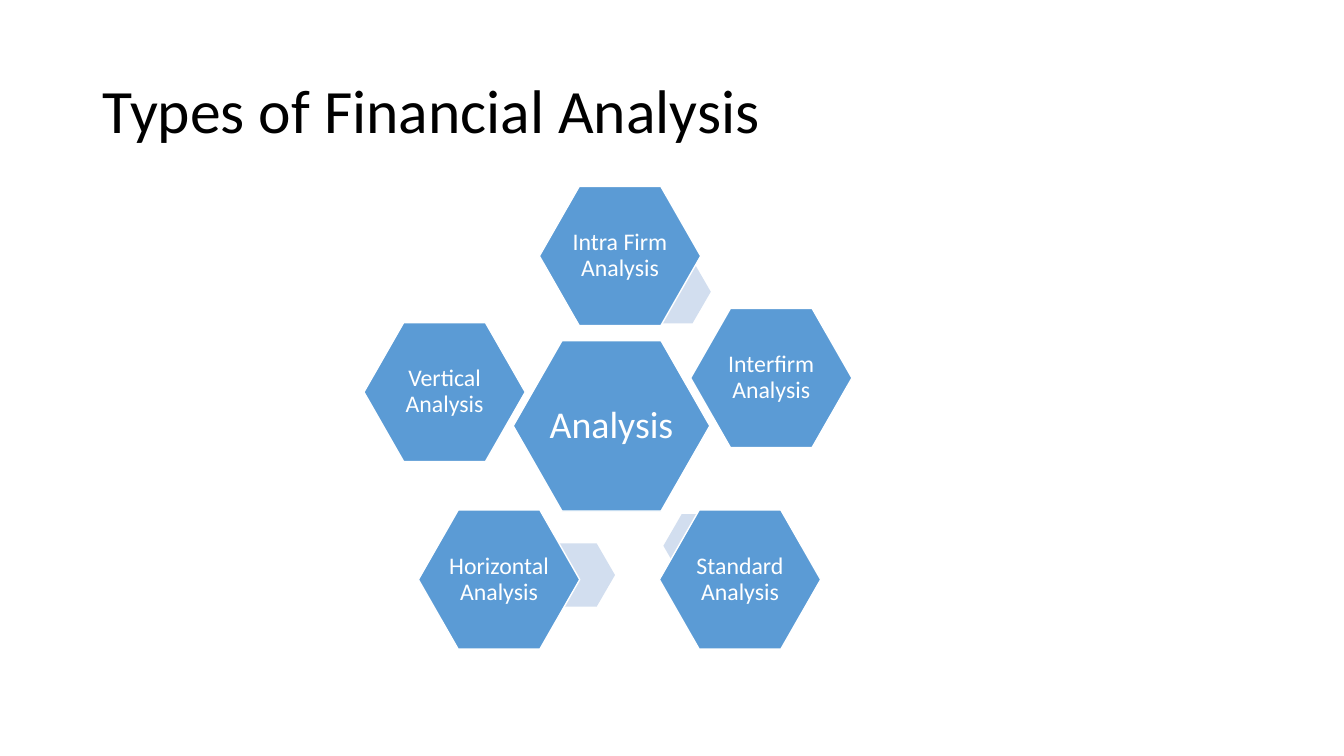
from dataclasses import dataclass

from pptx import Presentation
from pptx import util as u
from pptx.dml.color import RGBColor
from pptx.enum import shapes, text

# Content: label, left and top of each hexagon, left and top of its accent
TITLE = "Types of Financial Analysis"
HUB = ("Analysis", (5.09, 3.38))
ANALYSIS_TYPES = [
    ("Intra Firm Analysis", (5.35, 1.85), (6.31, 2.58)),
    ("Interfirm Analysis", (6.85, 3.06), None),
    ("Standard Analysis", (6.54, 5.06), (6.58, 5.1)),
    ("Horizontal Analysis", (4.15, 5.06), (5.36, 5.39)),
    ("Vertical Analysis", (3.61, 3.2), None),
]
HUB_SIZE, TYPE_SIZE, ACCENT_SIZE = (1.95, 1.69), (1.6, 1.38), (0.74, 0.63)


@dataclass(frozen=True)
class Theme:
    font: str = "Calibri"
    ink: str = "000000"
    label: str = "FFFFFF"
    hexagon: str = "5B9BD5"
    accent: str = "D2DEEF"
    title_pt: int = 44
    hub_pt: int = 27
    type_pt: int = 17


theme = Theme()


def write(holder, words, size, color, align, frame_format):
    frame = holder.text_frame
    frame.text = words
    frame_format = {"word_wrap": True, "auto_size": text.MSO_AUTO_SIZE.NONE,
                    "vertical_anchor": text.MSO_ANCHOR.MIDDLE, **frame_format}
    for name, value in frame_format.items():
        setattr(frame, name, value)
    paragraph = frame.paragraphs[0]
    paragraph.alignment = align
    paragraph.line_spacing = 0.9
    font = paragraph.runs[0].font
    for name, value in {"name": theme.font, "size": u.Pt(size), "bold": False}.items():
        setattr(font, name, value)
    font.color.rgb = RGBColor.from_string(color)


def add_hexagon(slide, corner, size, fill, slant):
    hexagon = slide.shapes.add_shape(
        shapes.MSO_SHAPE.HEXAGON, *(u.Inches(v) for v in corner + size))
    hexagon.adjustments[0] = slant
    hexagon.shadow.inherit = False
    hexagon.fill.solid()
    hexagon.fill.fore_color.rgb = RGBColor.from_string(fill)
    hexagon.line.fill.background()
    return hexagon


def add_labelled_hexagon(slide, label, corner, size, points):
    hexagon = add_hexagon(slide, corner, size, theme.hexagon, 0.286)
    hexagon.line.color.rgb = RGBColor.from_string(theme.label)
    hexagon.line.width = u.Pt(1)
    margins = {f"margin_{side}": 0 for side in ("left", "top", "right", "bottom")}
    write(hexagon, label, points, theme.label, text.PP_ALIGN.CENTER, margins)


def main():
    deck = Presentation()
    deck.slide_width, deck.slide_height = u.Inches(13.33), u.Inches(7.5)
    slide = deck.slides.add_slide(deck.slide_layouts[5])

    # Title
    title = slide.shapes.title
    place = {"left": 0.92, "top": 0.4, "width": 11.5, "height": 1.45}
    for name, value in place.items():
        setattr(title, name, u.Inches(value))
    write(title, TITLE, theme.title_pt, theme.ink, text.PP_ALIGN.LEFT, {})

    # Central hexagon
    add_labelled_hexagon(slide, *HUB, HUB_SIZE, theme.hub_pt)

    # Surrounding types, each in front of its accent
    for label, corner, accent_corner in ANALYSIS_TYPES:
        if accent_corner:
            add_hexagon(slide, accent_corner, ACCENT_SIZE, theme.accent, 0.289)
        add_labelled_hexagon(slide, label, corner, TYPE_SIZE, theme.type_pt)

    deck.save("out.pptx")


if __name__ == "__main__":
    main()
